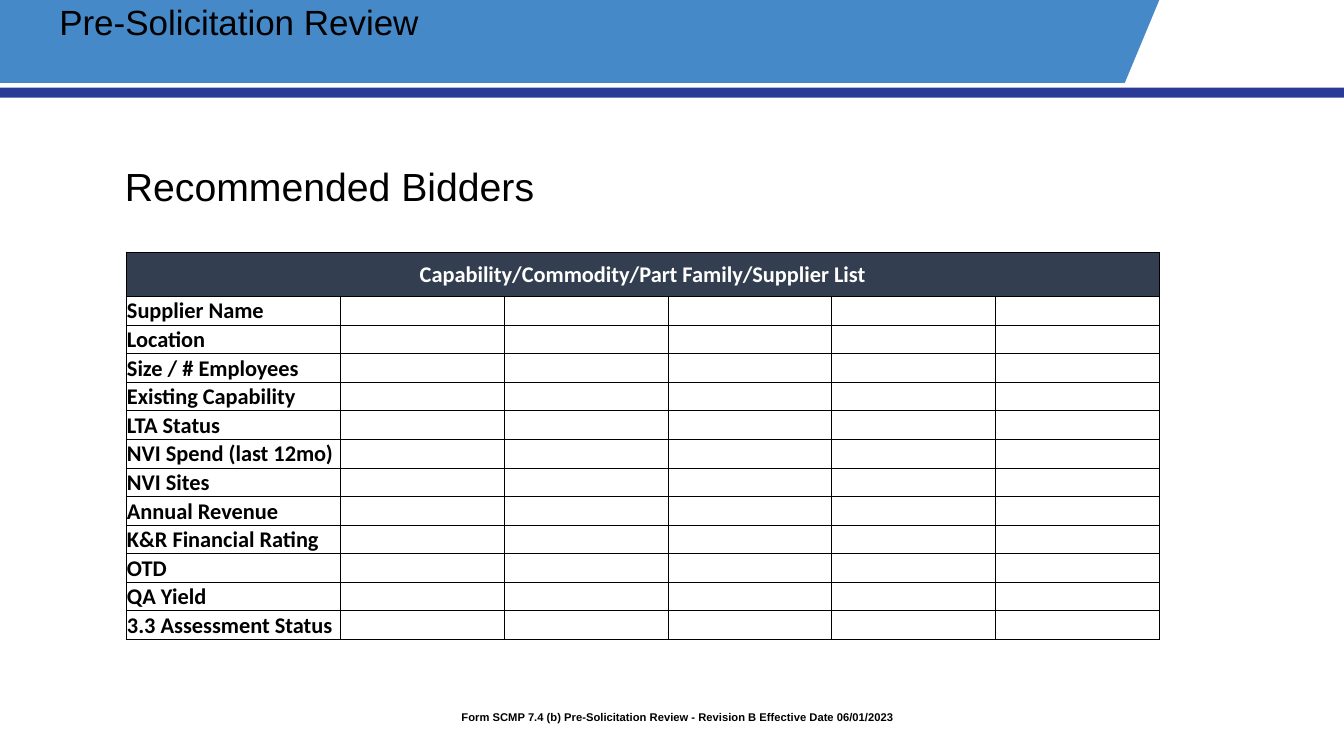
from lxml.etree import SubElement
from pptx import Presentation
from pptx.dml.color import RGBColor
from pptx.enum.shapes import MSO_SHAPE
from pptx.enum.text import MSO_ANCHOR, MSO_AUTO_SIZE, PP_ALIGN
from pptx.oxml.ns import qn
from pptx.util import Cm, Pt

TITLE = "Pre-Solicitation Review"
HEADING = "Recommended Bidders"
FOOTER = "Form SCMP 7.4 (b) Pre-Solicitation Review - Revision B Effective Date 06/01/2023"
TABLE_HEADER = "Capability/Commodity/Part Family/Supplier List"
ROW_LABELS = [
    "Supplier Name",
    "Location",
    "Size / # Employees",
    "Existing Capability",
    "LTA Status",
    "NVI Spend (last 12mo)",
    "NVI Sites",
    "Annual Revenue",
    "K&R Financial Rating",
    "OTD",
    "QA Yield",
    "3.3 Assessment Status",
]
SUPPLIER_COLUMNS = 5

BLACK = RGBColor(0x00, 0x00, 0x00)
WHITE = RGBColor(0xFF, 0xFF, 0xFF)
BANNER_BLUE = RGBColor(0x45, 0x89, 0xC8)
RULE_BLUE = RGBColor(0x2A, 0x3B, 0x97)
HEADER_SLATE = RGBColor(0x33, 0x3F, 0x50)

SLIDE_WIDTH, SLIDE_HEIGHT = Cm(33.87), Cm(19.05)
LABEL_WIDTH, SUPPLIER_WIDTH = Cm(5.39), Cm(4.13)
HEADER_HEIGHT, ROW_HEIGHT = Cm(1.12), Cm(0.72)


def paint(shape, color):
    shape.shadow.inherit = False
    shape.fill.solid()
    shape.fill.fore_color.rgb = color
    shape.line.fill.background()


def add_bar(slide, top, width, height, color):
    bar = slide.shapes.add_shape(MSO_SHAPE.RECTANGLE, 0, top, width, height)
    paint(bar, color)


def add_banner(slide):
    add_bar(slide, 0, Cm(33.5), Cm(2.09), BANNER_BLUE)
    builder = slide.shapes.build_freeform(Cm(29.22), 0)
    builder.add_line_segments(
        [(SLIDE_WIDTH, 0), (SLIDE_WIDTH, Cm(2.21)), (Cm(28.3), Cm(2.21))], close=True
    )
    paint(builder.convert_to_shape(), WHITE)
    add_bar(slide, Cm(2.21), SLIDE_WIDTH, Cm(0.25), RULE_BLUE)


def write(frame, text, size, font_name="Arial", color=BLACK, bold=False):
    frame.text = text
    for run in frame.paragraphs[0].runs:
        run.font.size = Pt(size)
        run.font.name = font_name
        run.font.color.rgb = color
        run.font.bold = bold
    return frame.paragraphs[0]


def add_line_of_text(slide, text, box, size, bold=False, indent=0):
    frame = slide.shapes.add_textbox(*box).text_frame
    frame.word_wrap = True
    paragraph = write(frame, text, size, bold=bold)
    paragraph.line_spacing = 0.9
    paragraph._p.get_or_add_pPr().set("marL", str(indent))


def place_title(slide):
    title = slide.shapes.title
    title.left, title.top, title.width, title.height = Cm(1.24), 0, Cm(24.1), Cm(2.41)
    frame = title.text_frame
    frame.auto_size = MSO_AUTO_SIZE.NONE
    frame.vertical_anchor = MSO_ANCHOR.TOP
    paragraph = write(frame, TITLE, 25)
    paragraph.alignment = PP_ALIGN.LEFT
    paragraph.line_spacing = 0.9
    slide.shapes._spTree.append(title._element)


def format_cell(cell):
    cell.margin_left = cell.margin_right = cell.margin_top = Cm(0.02)
    cell.margin_bottom = 0
    cell.vertical_anchor = MSO_ANCHOR.BOTTOM
    properties = cell._tc.get_or_add_tcPr()
    for side in ("a:lnL", "a:lnR", "a:lnT", "a:lnB"):
        border = SubElement(properties, qn(side), w=str(Pt(0.5)))
        fill = SubElement(border, qn("a:solidFill"))
        SubElement(fill, qn("a:srgbClr"), val=str(BLACK))
    cell.fill.background()
    paragraph = cell.text_frame.paragraphs[0]._p
    SubElement(paragraph, qn("a:endParaRPr"), sz="1600")


def add_supplier_table(slide):
    width = LABEL_WIDTH + SUPPLIER_COLUMNS * SUPPLIER_WIDTH
    height = HEADER_HEIGHT + len(ROW_LABELS) * ROW_HEIGHT
    table = slide.shapes.add_table(
        len(ROW_LABELS) + 1, SUPPLIER_COLUMNS + 1, Cm(3.18), Cm(6.35), width, height
    ).table
    table.first_row = table.horz_banding = False
    for index, column in enumerate(table.columns):
        column.width = SUPPLIER_WIDTH if index else LABEL_WIDTH
    for index, row in enumerate(table.rows):
        row.height = ROW_HEIGHT if index else HEADER_HEIGHT
    for cell in table.iter_cells():
        format_cell(cell)

    header = table.cell(0, 0)
    header.merge(table.cell(0, SUPPLIER_COLUMNS))
    header.fill.solid()
    header.fill.fore_color.rgb = HEADER_SLATE
    header.vertical_anchor = MSO_ANCHOR.MIDDLE
    paragraph = write(header.text_frame, TABLE_HEADER, 16, "Calibri", WHITE, True)
    paragraph.alignment = PP_ALIGN.CENTER
    for index, label in enumerate(ROW_LABELS, start=1):
        write(table.cell(index, 0).text_frame, label, 16, "Calibri", bold=True)


def main():
    deck = Presentation()
    deck.slide_width, deck.slide_height = SLIDE_WIDTH, SLIDE_HEIGHT
    slide = deck.slides.add_slide(deck.slide_layouts[5])
    add_banner(slide)
    add_line_of_text(slide, HEADING, (Cm(2.9), Cm(4.11), Cm(23.7), Cm(1.32)), 28)
    add_supplier_table(slide)
    place_title(slide)
    add_line_of_text(
        slide, FOOTER, (Cm(10.74), Cm(17.81), Cm(12.4), Cm(0.97)), 8, True, Cm(0.64)
    )
    deck.save("out.pptx")


if __name__ == "__main__":
    main()
